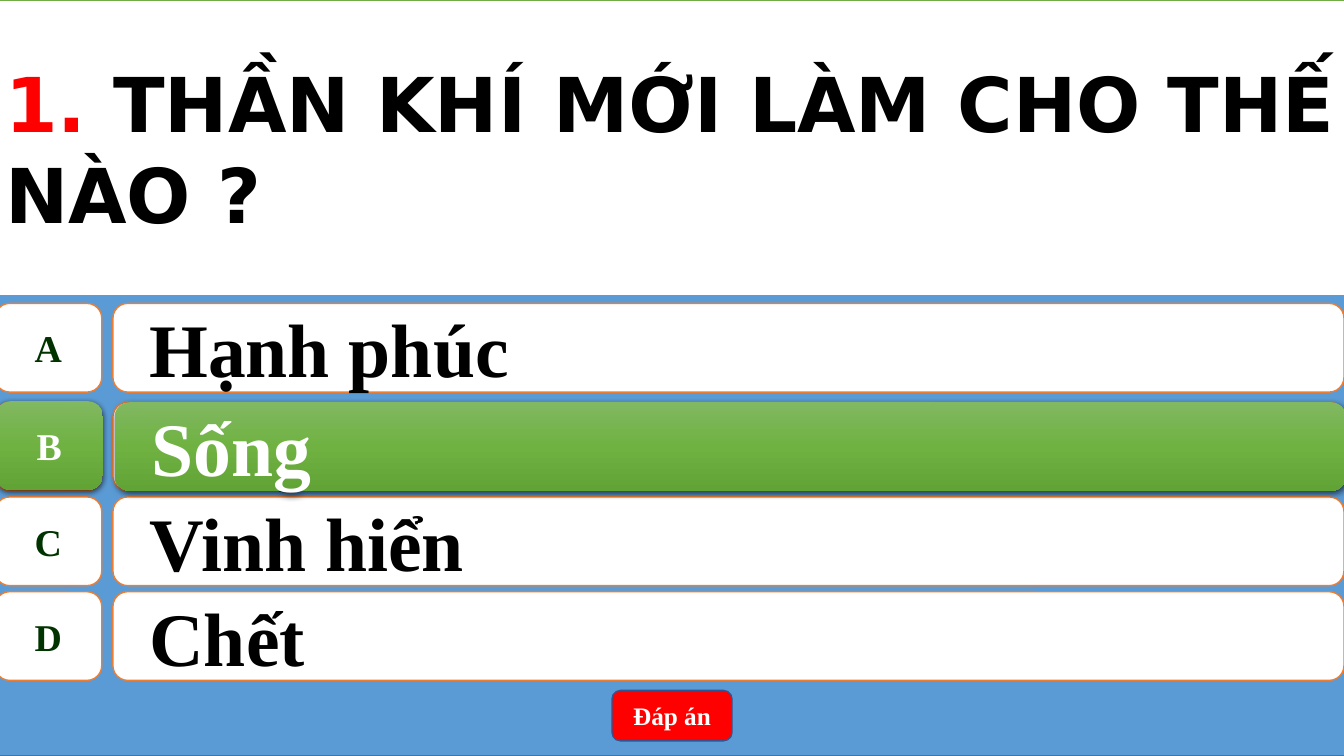
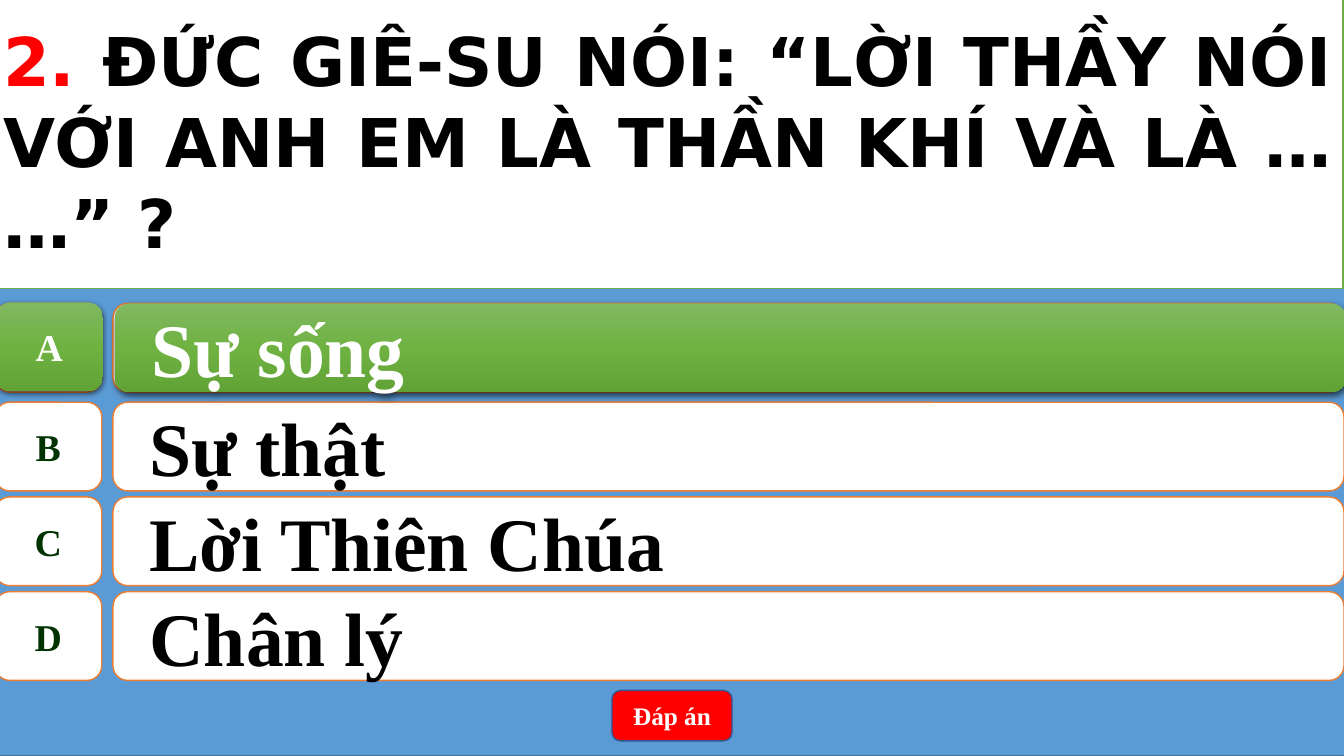
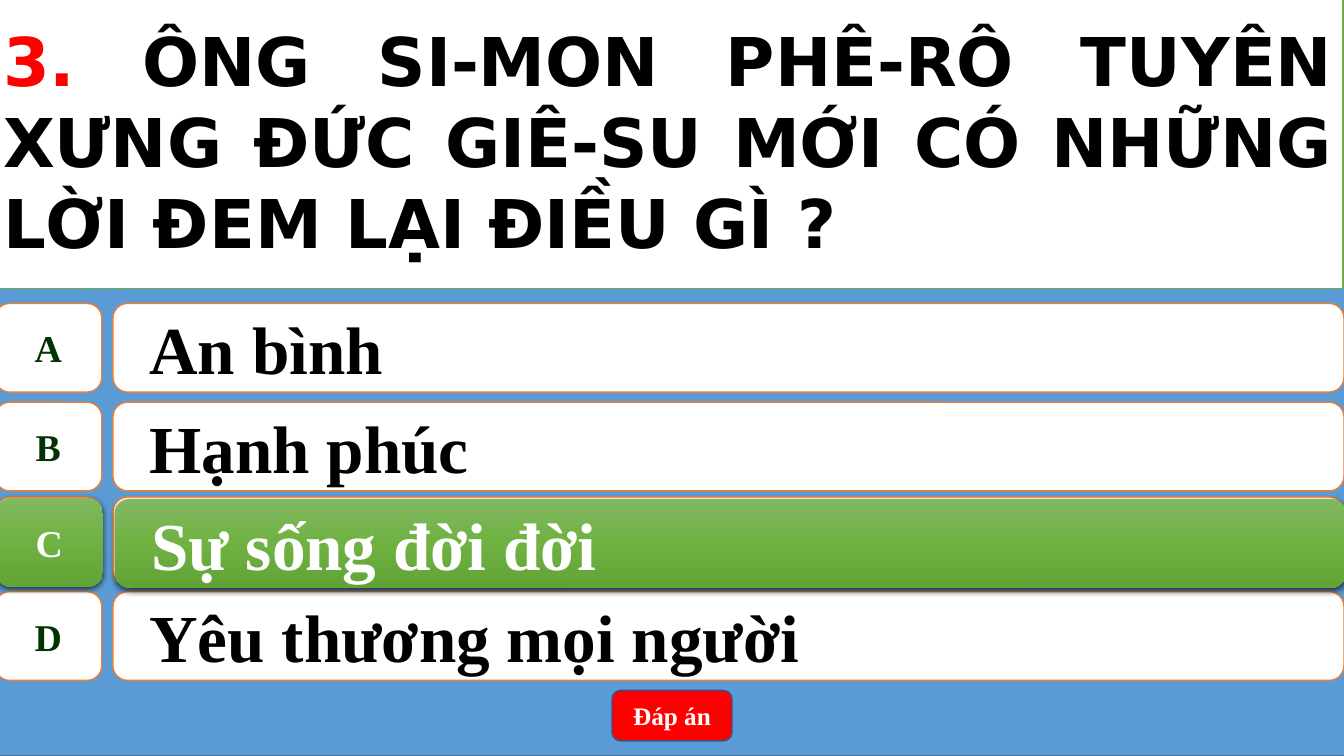
from copy import deepcopy
from dataclasses import dataclass

from lxml.etree import SubElement
from pptx import Presentation
from pptx.dml.color import RGBColor
from pptx.enum.shapes import MSO_SHAPE
from pptx.enum.text import MSO_ANCHOR, MSO_AUTO_SIZE, PP_ALIGN
from pptx.oxml.ns import qn
from pptx.util import Inches, Pt

# Shared look
SERIF, SANS = "Times New Roman", "DejaVu Sans"
WHITE, BLACK, RED = "FFFFFF", "000000", "FF0000"
BLUE, BLUE_EDGE, BUTTON_EDGE = "5B9BD5", "43739E", "325491"
ORANGE, GREEN, LETTER = "ED7D31", "70AD47", "003300"
GREEN_STOPS = ((0, "81B861"), (0.5, "6FB242"), (1, "62A336"))

# Shared layout, in inches
LEFT, FULL_WIDTH = -0.05, 13.39
ROW_TOPS = (3.01, 3.99, 4.93, 5.87)
ROW_HEIGHT, BADGE_WIDTH = 0.88, 1.06
BAR_OFFSET, BAR_WIDTH = 1.17, 12.21


@dataclass
class Quiz:
    number: str
    question: str
    answers: tuple
    correct: int
    question_size: int = 48
    answer_size: int = 54
    question_at: tuple = (-0.07, -0.07)
    bar_drop: float = 0


QUIZZES = (
    Quiz("1. ", "THẦN KHÍ MỚI LÀM CHO THẾ NÀO ?",
         ("Hạnh phúc", "Sống", "Vinh hiển", "Chết"), 1,
         question_size=54, question_at=(LEFT, 0)),
    Quiz("2. ", "ĐỨC GIÊ-SU NÓI: “LỜI THẦY NÓI VỚI ANH EM LÀ THẦN KHÍ VÀ LÀ … …” ?",
         ("Sự sống", "Sự thật", "Lời Thiên Chúa", "Chân lý"), 0),
    Quiz("3. ", "ÔNG SI-MON PHÊ-RÔ TUYÊN XƯNG ĐỨC GIÊ-SU MỚI CÓ NHỮNG LỜI ĐEM LẠI ĐIỀU GÌ ?",
         ("An bình", "Hạnh phúc", "Sự sống đời đời", "Yêu thương mọi người"), 2,
         answer_size=48, bar_drop=0.02),
)


def color(value):
    return RGBColor.from_string(value)


def paint(shape, fill, line):
    shape.fill.solid()
    shape.fill.fore_color.rgb = color(fill)
    shape.line.color.rgb = color(line)
    shape.line.width = Pt(1)


def paint_correct(shape):
    """Green gradient with a soft shadow below."""
    shape.fill.gradient()
    shape.fill.gradient_angle = 270
    stop_list = shape.element.spPr.find(".//" + qn("a:gsLst"))
    stop_list.insert(1, deepcopy(stop_list[0]))
    for stop, (position, value) in zip(shape.fill.gradient_stops, GREEN_STOPS):
        stop.position = position
        stop.color.rgb = color(value)
    shape.line.fill.background()
    effects = shape.element.spPr.find(qn("a:effectLst"))
    shadow = SubElement(effects, qn("a:outerShdw"), blurRad=str(Pt(4.5)),
                        dist=str(Pt(1.5)), dir="5400000", rotWithShape="0")
    tint = SubElement(shadow, qn("a:srgbClr"), val=BLACK)
    SubElement(tint, qn("a:alpha"), val="63000")


def add_box(shapes, kind, left, top, width, height):
    box = shapes.add_shape(kind, Inches(left), Inches(top), Inches(width), Inches(height))
    box.shadow.inherit = False
    return box


def style_span(span, size, value, font):
    span.font.size, span.font.bold, span.font.name = Pt(size), True, font
    span.font.color.rgb = color(value)


def write(box, text, size, value, align=PP_ALIGN.CENTER, wrap=True):
    frame = box.text_frame
    frame.text, frame.word_wrap = text, wrap
    frame.vertical_anchor = MSO_ANCHOR.MIDDLE
    para = frame.paragraphs[0]
    para.alignment = align
    style_span(para.runs[0], size, value, SERIF)
    return para


def add_answer(page, letter, answer, size, badge_at, bar_at, correct=False):
    """One row: letter badge and answer bar, grouped."""
    row = page.shapes.add_group_shape()
    badge = add_box(row.shapes, MSO_SHAPE.FLOWCHART_ALTERNATE_PROCESS,
                    *badge_at, BADGE_WIDTH, ROW_HEIGHT)
    bar = add_box(row.shapes, MSO_SHAPE.ROUNDED_RECTANGLE, *bar_at, BAR_WIDTH, ROW_HEIGHT)
    for box in (badge, bar):
        if correct:
            paint_correct(box)
        else:
            paint(box, WHITE, ORANGE)
    write(badge, letter, 27, WHITE if correct else LETTER, wrap=False)
    para = write(bar, answer, size, WHITE if correct else BLACK, PP_ALIGN.LEFT)
    para.level = 1
    properties = para.runs[0].font._element.getparent().getparent().find(qn("a:pPr"))
    properties.set("marL", str(Inches(0.5)))
    properties.set("indent", str(Inches(-0.28)))


def add_answers(page, quiz):
    bar_left = LEFT + BAR_OFFSET
    for letter, answer, top in zip("ABCD", quiz.answers, ROW_TOPS):
        add_answer(page, letter, answer, quiz.answer_size, (LEFT, top), (bar_left, top))
    # Highlighted answer over its row
    top = ROW_TOPS[quiz.correct] + quiz.bar_drop
    add_answer(page, "ABCD"[quiz.correct], quiz.answers[quiz.correct], quiz.answer_size,
               (LEFT + 0.01, top - 0.01), (bar_left + 0.02, top), correct=True)


def add_button(page):
    button = add_box(page.shapes, MSO_SHAPE.ROUNDED_RECTANGLE, 6.07, 6.85, 1.19, 0.5)
    paint(button, RED, BUTTON_EDGE)
    write(button, "Đáp án", 18, WHITE)


def add_question(page, quiz):
    title = page.shapes.title
    title.left, title.top = (Inches(length) for length in quiz.question_at)
    title.width, title.height = Inches(FULL_WIDTH), Inches(2.93)
    paint(title, WHITE, GREEN)
    frame = title.text_frame
    frame.word_wrap, frame.auto_size = True, MSO_AUTO_SIZE.NONE
    frame.vertical_anchor = MSO_ANCHOR.MIDDLE
    para = frame.paragraphs[0]
    para.alignment = PP_ALIGN.JUSTIFY
    for text, value in ((quiz.number, RED), (quiz.question, BLACK)):
        span = para.add_run()
        span.text = text
        style_span(span, quiz.question_size, value, SANS)
    # Bring the question to the front
    title.element.getparent().append(title.element)


def add_quiz_page(deck, quiz):
    page = deck.slides.add_slide(deck.slide_layouts[5])
    backdrop = add_box(page.shapes, MSO_SHAPE.RECTANGLE, LEFT, 0, FULL_WIDTH, 7.5)
    paint(backdrop, BLUE, BLUE_EDGE)
    add_button(page)
    add_answers(page, quiz)
    add_question(page, quiz)


def main():
    deck = Presentation()
    deck.slide_width, deck.slide_height = Inches(13.33), Inches(7.5)
    for quiz in QUIZZES:
        add_quiz_page(deck, quiz)
    deck.save("out.pptx")


if __name__ == "__main__":
    main()
